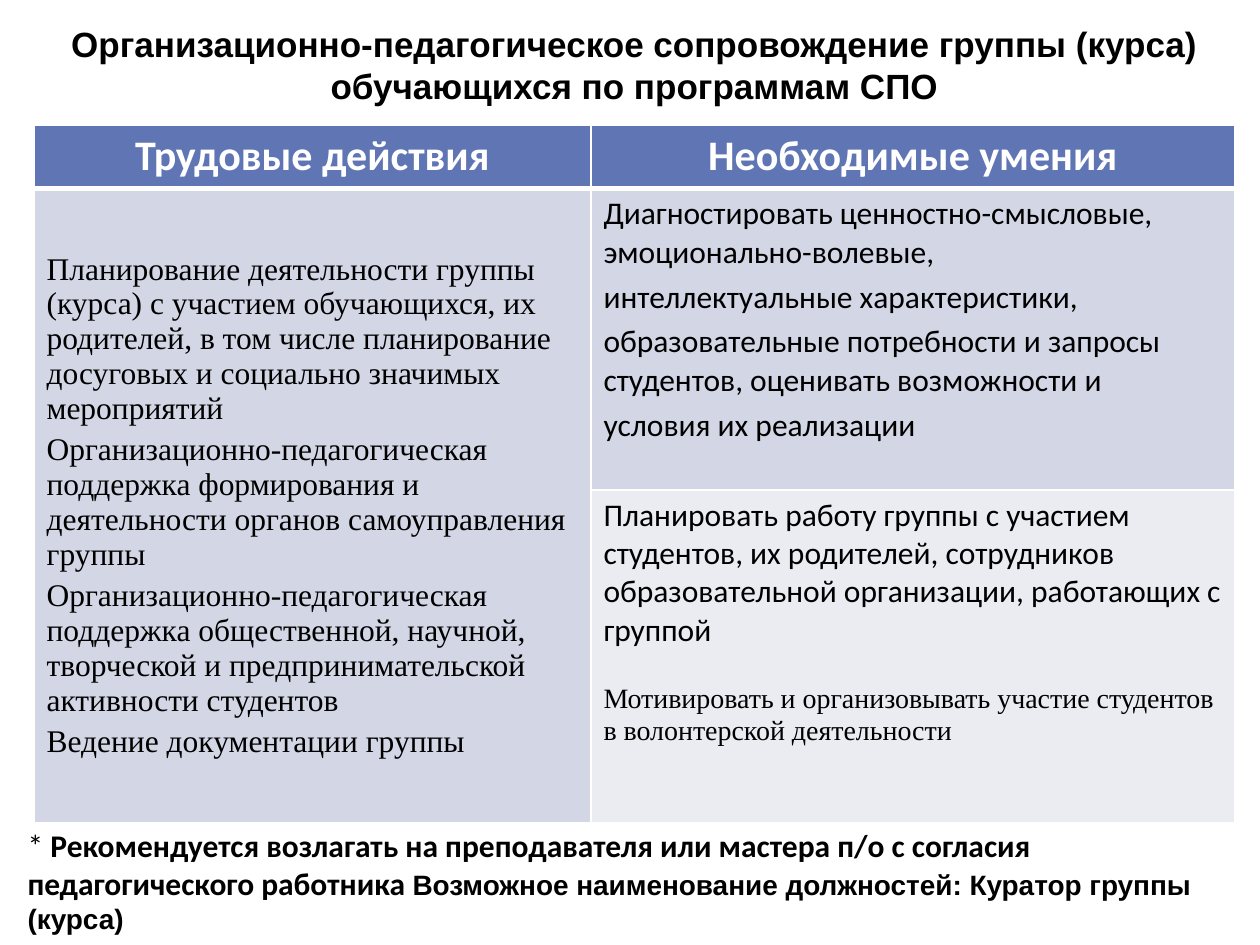
import pptx
import pptx.dml.color
import pptx.enum.text
import pptx.oxml.ns
import pptx.util
from lxml import etree
from pptx.util import Inches

ALIGN = pptx.enum.text.PP_ALIGN
ANCHOR = pptx.enum.text.MSO_ANCHOR

HEADINGS = ["Трудовые действия", "Необходимые умения"]
ACTIONS = [
    "Планирование деятельности группы (курса) с участием обучающихся, их родителей, в том числе планирование досуговых и социально значимых мероприятий",
    "Организационно-педагогическая поддержка формирования и деятельности органов самоуправления группы",
    "Организационно-педагогическая поддержка общественной, научной, творческой и предпринимательской активности студентов",
    "Ведение документации группы",
]
DIAGNOSTIC_SKILLS = [
    "Диагностировать ценностно-смысловые, эмоционально-волевые,",
    "интеллектуальные характеристики,",
    "образовательные потребности и запросы студентов, оценивать возможности и",
    "условия их реализации",
]
PLANNING_SKILL = "Планировать работу группы с участием студентов, их родителей, сотрудников образовательной организации, работающих с группой"
VOLUNTEER_SKILL = "Мотивировать и организовывать участие студентов в волонтерской деятельности"


def color(value):
    """Turn a hex string into a colour."""
    return pptx.dml.color.RGBColor.from_string(value)


def add_text(paragraph, text, font="Calibri", size=18, bold=False, fill="000000",
             align=ALIGN.LEFT, before=0):
    """Add a formatted run to a paragraph."""
    paragraph.alignment = align
    paragraph.space_before = pptx.util.Pt(before)
    run = paragraph.add_run()
    run.text = text
    run.font.name = font
    run.font.size = pptx.util.Pt(size)
    run.font.bold = bold
    run.font.color.rgb = color(fill)


def add_paragraphs(frame, texts, **text_format):
    """Fill a text frame with evenly spaced paragraphs."""
    for index, text in enumerate(texts):
        paragraph = frame.add_paragraph() if index else frame.paragraphs[0]
        add_text(paragraph, text, before=3.6 if index else 0, **text_format)


def style_cell(cell, fill, top=1, bottom=1):
    """Give a cell its fill and white borders."""
    properties = cell._tc.get_or_add_tcPr()
    for tag, width in (("a:lnL", 1), ("a:lnR", 1), ("a:lnT", top), ("a:lnB", bottom)):
        line = etree.SubElement(properties, pptx.oxml.ns.qn(tag), w=str(pptx.util.Pt(width)))
        solid = etree.SubElement(line, pptx.oxml.ns.qn("a:solidFill"))
        etree.SubElement(solid, pptx.oxml.ns.qn("a:srgbClr"), val="FFFFFF")
    cell.fill.solid()
    cell.fill.fore_color.rgb = color(fill)


def fill_title(slide, left, top, width, height):
    """Place the slide title in its box."""
    title = slide.shapes.title
    title.left, title.top, title.width, title.height = left, top, width, height
    title.text_frame.word_wrap = True
    title.text_frame.auto_size = pptx.enum.text.MSO_AUTO_SIZE.NONE
    title.text_frame.vertical_anchor = ANCHOR.MIDDLE
    add_text(title.text_frame.paragraphs[0],
             "Организационно-педагогическое сопровождение группы (курса) обучающихся по программам СПО",
             font="Arial", size=20, bold=True, align=ALIGN.CENTER)


def add_duties_table(slide, left, top, width, height):
    """Add the table of actions and skills."""
    table = slide.shapes.add_table(3, 2, left, top, width, height).table
    first_column, header_height, first_row = Inches(4.42), Inches(0.49), Inches(2.39)
    for column, size in zip(table.columns, (first_column, width - first_column)):
        column.width = size
    row_heights = (header_height, first_row, height - header_height - first_row)
    for row, size in zip(table.rows, row_heights):
        row.height = size

    for index, heading in enumerate(HEADINGS):
        cell = table.cell(0, index)
        cell.vertical_anchor = ANCHOR.MIDDLE
        style_cell(cell, "6076B4", bottom=3)
        add_text(cell.text_frame.paragraphs[0], heading, size=24, bold=True,
                 fill="FFFFFF", align=ALIGN.CENTER)
        style_cell(table.cell(1, index), "D2D6E5", top=3)
        style_cell(table.cell(2, index), ("D2D6E5", "EAECF2")[index])

    actions = table.cell(1, 0)
    actions.merge(table.cell(2, 0))
    actions.vertical_anchor = ANCHOR.MIDDLE
    add_paragraphs(actions.text_frame, ACTIONS, font="Times New Roman")
    add_paragraphs(table.cell(1, 1).text_frame, DIAGNOSTIC_SKILLS)
    planning = table.cell(2, 1).text_frame
    add_paragraphs(planning, [PLANNING_SKILL])
    add_text(planning.add_paragraph(), VOLUNTEER_SKILL, font="Times New Roman",
             size=16, before=19.5)


def add_footnote(slide, left, top, width, height):
    """Add the recommendation below the table."""
    frame = slide.shapes.add_textbox(left, top, width, height).text_frame
    frame.word_wrap = True
    paragraph = frame.paragraphs[0]
    add_text(paragraph, "* ")
    add_text(paragraph,
             "Рекомендуется возлагать на преподавателя или мастера п/о с согласия педагогического работника ",
             bold=True)
    add_text(paragraph, "Возможное наименование должностей: Куратор группы (курса)",
             font="Arial", size=16, bold=True)


def main():
    """Build and save the presentation."""
    presentation = pptx.Presentation()
    presentation.slide_width = Inches(10)
    presentation.slide_height = Inches(7.5)
    slide = presentation.slides.add_slide(presentation.slide_layouts.get_by_name("Title Only"))
    fill_title(slide, Inches(0.27), Inches(0.13), Inches(9.53), Inches(0.77))
    add_duties_table(slide, Inches(0.27), Inches(0.99), Inches(9.53), Inches(5.52))
    add_footnote(slide, Inches(0.12), Inches(6.51), Inches(9.68), Inches(0.97))
    presentation.save("out.pptx")


if __name__ == "__main__":
    main()
